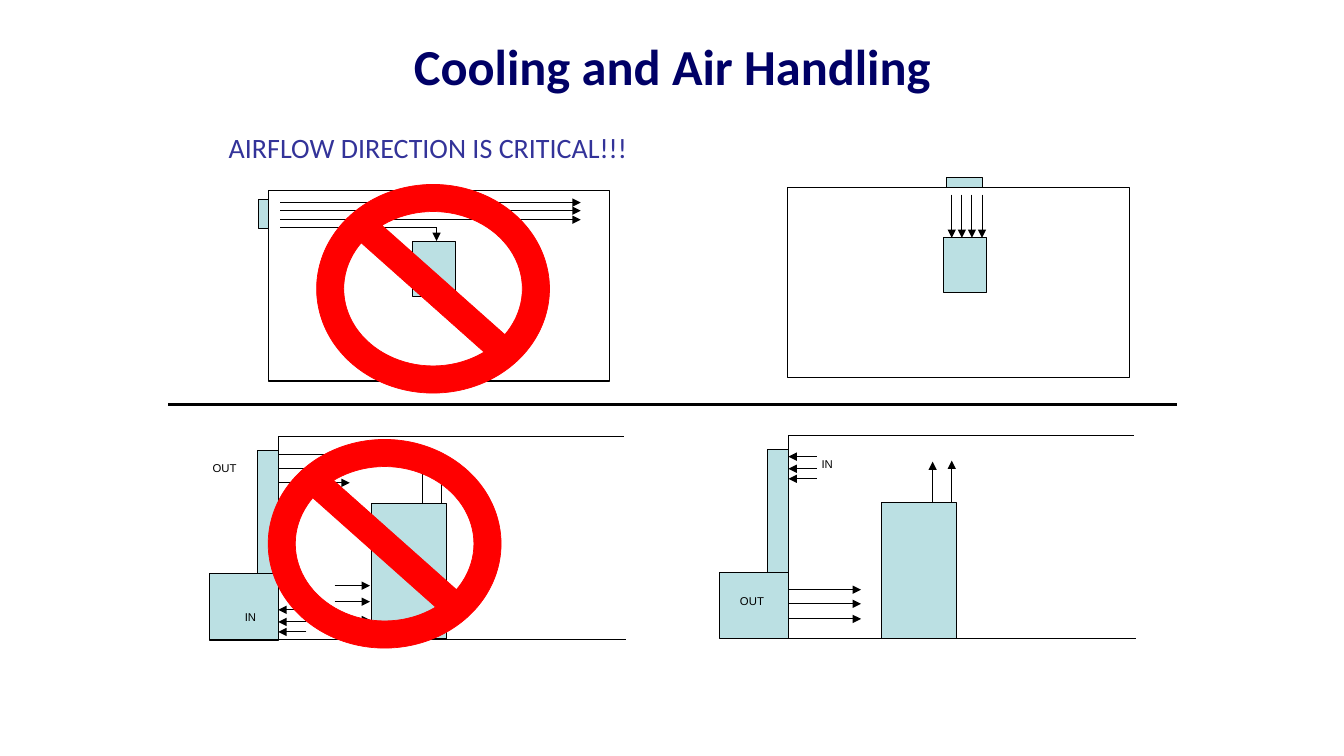
from pptx import Presentation
from pptx.dml.color import RGBColor
from pptx.enum.shapes import MSO_CONNECTOR, MSO_SHAPE
from pptx.enum.text import MSO_ANCHOR, PP_ALIGN
from pptx.oxml.ns import qn
from pptx.util import Inches, Pt
from lxml.etree import SubElement

prs = Presentation()
prs.slide_width, prs.slide_height = Inches(13.33), Inches(7.5)
s = prs.slides.add_slide(prs.slide_layouts[6])


def add_shape(kind, x, y, w, h, fill=None, line="000000", width=0.75):
    sp = s.shapes.add_shape(kind, Inches(x), Inches(y), Inches(w), Inches(h))
    sp.shadow.inherit = False
    if fill:
        sp.fill.solid()
        sp.fill.fore_color.rgb = RGBColor.from_string(fill)
    else:
        sp.fill.background()
    sp.line.color.rgb = RGBColor.from_string(line)
    sp.line.width = Pt(width)
    return sp


def add_line(x1, y1, x2, y2, arrow=True, width=0.75):
    c = s.shapes.add_connector(MSO_CONNECTOR.STRAIGHT, Inches(x1), Inches(y1),
                               Inches(x2), Inches(y2))
    c.line.color.rgb = RGBColor.from_string("000000")
    c.line.width = Pt(width)
    if arrow:
        SubElement(c.line._get_or_add_ln(), qn("a:tailEnd"), type="triangle")
    SubElement(c._element.spPr, qn("a:effectLst"))


# Boxes: rooms, vents and racks of the upper row, then both lower rooms
boxes = [
    (2.66, 1.89, 3.39, 1.89, None), (2.56, 1.98, 0.1, 0.29, "BBE0E3"),
    (4.09, 2.4, 0.43, 0.54, "BBE0E3"),
    (7.81, 1.86, 3.39, 1.89, None), (9.39, 1.76, 0.35, 0.1, "BBE0E3"),
    (9.36, 2.36, 0.43, 0.54, "BBE0E3"),
]
lower_rooms = [(2.76, 4.33), (7.82, 4.32)]
for x, y in lower_rooms:
    boxes += [(x + 0.92, y + 0.67, 0.75, 1.34, "BBE0E3"),
              (x - 0.21, y + 0.14, 0.21, 1.22, "BBE0E3"),
              (x - 0.68, y + 1.36, 0.68, 0.66, "BBE0E3")]
for x, y, w, h, fill in boxes:
    add_shape(MSO_SHAPE.RECTANGLE, x, y, w, h, fill)

# Upper row airflow: side vent on the left, ceiling vent on the right
for y in (2.01, 2.09, 2.18):
    add_line(2.78, y, 5.76, y)
add_line(2.78, 2.26, 4.33, 2.26, arrow=False)
add_line(4.33, 2.26, 4.33, 2.39)
for i in range(4):
    add_line(9.44 + 0.1 * i, 1.93, 9.44 + 0.1 * i, 2.36)

# Lower rooms: wall, ceiling, floor and hot air rising from the rack
for x, y in lower_rooms:
    add_line(x, y, x, y + 2.01, arrow=False)
    add_line(x, y, x + 3.43, y, arrow=False)
    add_line(x, y + 2.01, x + 3.45, y + 2.01, arrow=False)
    add_line(x + 1.62, y + 0.66, x + 1.62, y + 0.25)
    add_line(x + 1.43, y + 0.67, x + 1.43, y + 0.26)

# Lower row airflow: start x, end x, heights
for x1, x2, heights in [
    (2.76, 3.47, (4.51, 4.65, 4.79)),
    (3.04, 2.76, (6.05, 6.17, 6.27)),
    (3.32, 3.67, (5.81, 5.97, 6.15)),
    (8.1, 7.82, (4.53, 4.65, 4.75)),
    (7.83, 8.54, (5.85, 5.99, 6.14)),
]:
    for y in heights:
        add_line(x1, y, x2, y)

# Divider between the rows
add_line(1.67, 4.01, 11.67, 4.01, arrow=False, width=2.25)

# Texts
for text, x, y, w, h, font, size, color in [
    ("Cooling and Air Handling", 2.17, 0.3, 9, 0.88, "Calibri", 36, "000066"),
    ("AIRFLOW DIRECTION IS CRITICAL!!!", 2.17, 1.25, 9, 4.95, "Calibri", 20, "333399"),
    ("IN", 2.33, 5.98, 0.45, 0.26, "Arial", 14, "000000"),
    ("OUT", 2.01, 4.5, 0.65, 0.26, "Arial", 14, "000000"),
    ("OUT", 7.24, 5.82, 0.65, 0.26, "Arial", 14, "000000"),
    ("IN", 8.05, 4.46, 0.45, 0.26, "Arial", 14, "000000"),
]:
    tf = s.shapes.add_textbox(Inches(x), Inches(y), Inches(w), Inches(h)).text_frame
    tf.word_wrap = True
    tf.vertical_anchor = MSO_ANCHOR.TOP
    p = tf.paragraphs[0]
    p.text = text
    r = p.runs[0]
    r.font.name, r.font.size = font, Pt(size)
    r.font.color.rgb = RGBColor.from_string(color)
    if size == 36:
        p.alignment = PP_ALIGN.CENTER
        r.font.bold = True
    if font == "Arial":
        r._r.get_or_add_rPr().set("baseline", "30000")

# Prohibition signs over both wrong layouts
for x, y in [(2.66, 4.36), (3.14, 1.83)]:
    sign = add_shape(MSO_SHAPE.NO_SYMBOL, x, y, 2.31, 2.07, "FF0000", "FF0000", 0.5)
    sign.adjustments[0] = 0.13

prs.save("out.pptx")
